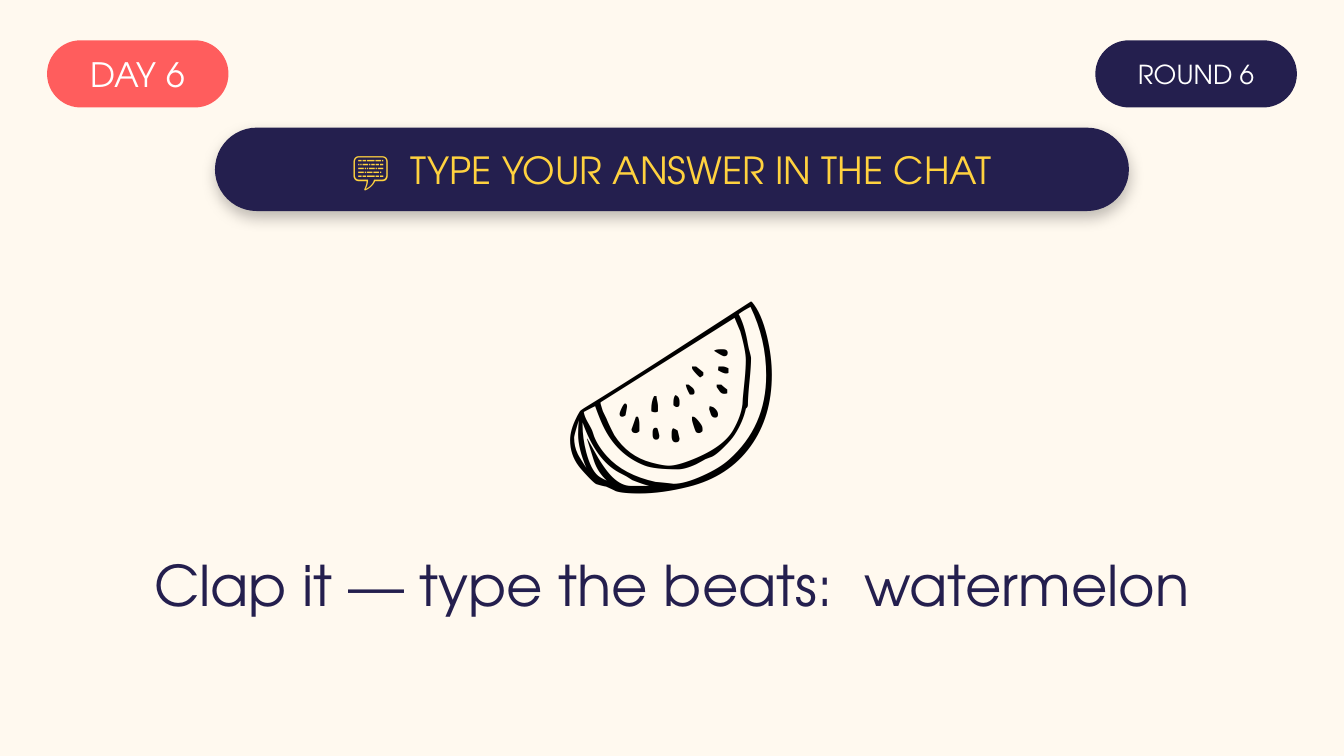
from dataclasses import dataclass

from lxml import etree
from pptx import Presentation
from pptx import util as u
from pptx.dml.color import RGBColor
from pptx.enum import shapes, text
from pptx.oxml.ns import qn

HUES = {"cream": "FFF9EF", "coral": "FF5D5D", "navy": "241F4E",
        "gold": "FFD23F", "white": "FFFFFF", "black": "000000"}
FONT = "TeX Gyre Adventor"
WIDE = 0.28  # extra width of a word gap, as a share of the text size


@dataclass
class Label:
    words: tuple[str, ...]  # joined by wide gaps
    box: tuple[float, float, float, float]  # left, top, width, height
    size: float
    hue: str
    fill: str = ""
    font: str = FONT
    mid: bool = True
    shade: bool = False


def rgb(name: str) -> RGBColor:
    return RGBColor.from_string(HUES[name])


def write(frame, label: Label) -> None:
    """Put the centred text into a frame."""
    frame.word_wrap = True
    frame.vertical_anchor = text.MSO_ANCHOR.MIDDLE if label.mid else text.MSO_ANCHOR.TOP
    para = frame.paragraphs[0]
    para.alignment = text.PP_ALIGN.CENTER
    for i, word in enumerate(label.words):
        if i:
            gap = para.add_run()
            gap.text = " "
            gap.font._element.set("spc", str(round(label.size * WIDE * 100)))
        para.add_run().text = word
    for run in para.runs:
        run.font.name = label.font
        run.font.size = u.Pt(label.size)
        run.font.color.rgb = rgb(label.hue)


def drop(shape) -> None:
    """Add a soft shadow straight below a shape."""
    fx = shape._element.spPr.find(qn("a:effectLst"))
    out = etree.SubElement(fx, qn("a:outerShdw"), blurRad=str(u.Pt(8)),
                           dist=str(u.Pt(3)), dir="5400000", algn="ctr", rotWithShape="0")
    tint = etree.SubElement(out, qn("a:srgbClr"), val=HUES["black"])
    etree.SubElement(tint, qn("a:alpha"), val="25000")


def draw(slide, label: Label) -> None:
    """Draw a filled pill, or a plain text box when there is no fill."""
    box = [u.Pt(v) for v in label.box]
    if not label.fill:
        write(slide.shapes.add_textbox(*box).text_frame, label)
        return
    pill = slide.shapes.add_shape(shapes.MSO_SHAPE.ROUNDED_RECTANGLE, *box)
    pill.adjustments[0] = 0.5
    pill.shadow.inherit = False
    pill.fill.solid()
    pill.fill.fore_color.rgb = rgb(label.fill)
    pill.line.fill.background()
    frame = pill.text_frame
    frame.margin_left = frame.margin_right = frame.margin_top = frame.margin_bottom = 0
    write(frame, label)
    if label.shade:
        drop(pill)


LABELS = [
    # Corner tags
    Label(("DAY 6",), (25.2, 21.6, 97.2, 36), 18, "white", "coral"),
    Label(("ROUND 6",), (586.8, 21.6, 108, 36), 14, "white", "navy"),
    # Banner
    Label(("💬", "TYPE YOUR ANSWER IN THE CHAT"), (115.2, 68.4, 489.6, 44.64),
          20, "gold", "navy", shade=True),
    # Fruit and prompt
    Label(("🍉",), (0, 122.4, 720, 133.2), 122, "black", font="Calibri", mid=False),
    Label(("Clap it — type the beats:", "watermelon"), (36, 277.2, 648, 72), 30, "navy"),
]


def main() -> None:
    deck = Presentation()
    deck.slide_width, deck.slide_height = u.Pt(720), u.Pt(405)
    slide = deck.slides.add_slide(deck.slide_layouts[6])
    back = slide.background.fill
    back.solid()
    back.fore_color.rgb = rgb("cream")
    for label in LABELS:
        draw(slide, label)
    deck.save("out.pptx")


if __name__ == "__main__":
    main()
